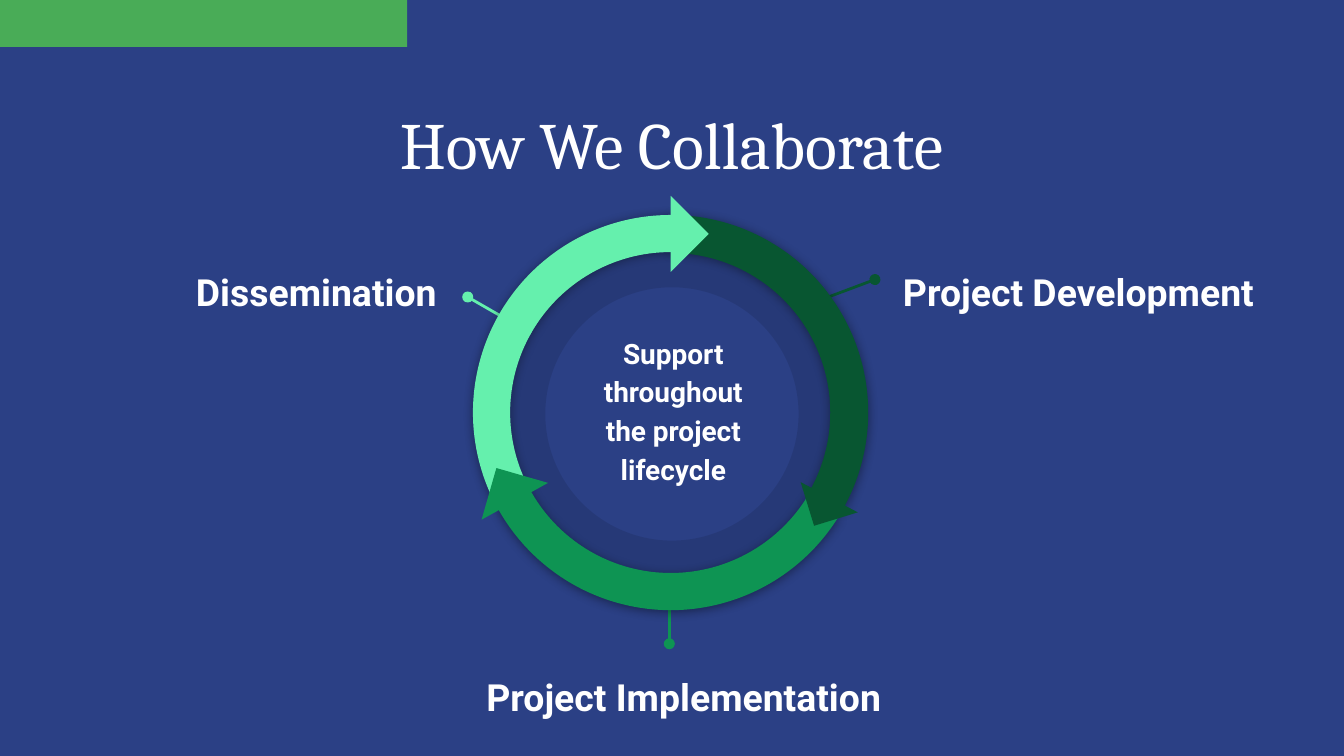
from lxml.etree import SubElement
from pptx import Presentation
from pptx.dml.color import RGBColor
from pptx.enum.shapes import MSO_CONNECTOR, MSO_SHAPE
from pptx.enum.text import MSO_ANCHOR, MSO_AUTO_SIZE, PP_ALIGN
from pptx.oxml.ns import qn
from pptx.util import Inches, Pt

NAVY = RGBColor(0x2B, 0x40, 0x85)
BANNER_GREEN = RGBColor(0x49, 0xAC, 0x57)
DARK = RGBColor(0x08, 0x56, 0x31)
LIGHT = RGBColor(0x65, 0xF0, 0xAD)
MEDIUM = RGBColor(0x0E, 0x94, 0x53)
BLACK = RGBColor(0, 0, 0)
WHITE = RGBColor(255, 255, 255)

SLIDE_W = 10
SLIDE_H = SLIDE_W * 9 / 16
CENTER = (4.99, 3.07)
DISC, RING = 2.78, 2.94
ADJ_PER_DEGREE = 0.6  # 60000 angle units over the 100000 adjustment scale

TITLE = "How We Collaborate"
HUB = "Support throughout the project lifecycle"

# label, label box, leader from dot to ring, colour
STAGES = [
    ("Dissemination", (1.36, 1.85, 2.04, 0.73), (3.48, 2.21, 3.95, 2.48), LIGHT),
    ("Project Development", (6.62, 1.85, 2.9, 0.68), (6.51, 2.08, 6.03, 2.26), DARK),
    ("Project Implementation", (3.52, 4.87, 3.8, 0.73), (4.98, 4.79, 4.98, 4.28), MEDIUM),
]

# colour, rotation, mirrored, start and end in degrees, thickness
ARCS = {
    "development": (DARK, 30, False, 240.24, 0.01, 0.096),
    "dissemination": (LIGHT, 330, True, 239.14, 357.88, 0.094),
    "implementation": (MEDIUM, 210, True, 238.6, 358.38, 0.094),
}
# colour, centre, side, rotation
HEADS = {
    "development": (DARK, (6.17, 3.7), 0.34, 342.9),
    "dissemination": (LIGHT, (4.99, 1.74), 0.4, 225),
    "implementation": (MEDIUM, (3.83, 3.73), 0.4, 106),
}


def inches(values):
    return [Inches(value) for value in values]


def square(center, side):
    return center[0] - side / 2, center[1] - side / 2, side, side


def add_filled(slide, kind, box, color, rotation=0):
    shape = slide.shapes.add_shape(kind, *inches(box))
    shape.fill.solid()
    shape.fill.fore_color.rgb = color
    shape.line.fill.background()
    shape.shadow.inherit = False
    shape.rotation = rotation
    return shape


def write(frame, text, size, font="Roboto", bold=True, align=PP_ALIGN.LEFT,
          anchor=MSO_ANCHOR.TOP, spacing=1.15):
    frame.word_wrap = True
    frame.auto_size = MSO_AUTO_SIZE.NONE
    frame.vertical_anchor = anchor
    frame.margin_left = frame.margin_right = Inches(0.1)
    frame.margin_top = frame.margin_bottom = Inches(0.1)
    paragraph = frame.paragraphs[0]
    paragraph.alignment = align
    paragraph.line_spacing = spacing
    run = paragraph.add_run()
    run.text = text
    run.font.size = Pt(size)
    run.font.name = font
    run.font.bold = bold
    run.font.color.rgb = WHITE


def add_text(slide, box, text, size, **text_format):
    write(slide.shapes.add_textbox(*inches(box)).text_frame, text, size, **text_format)


def add_leader(slide, ends, color):
    leader = slide.shapes.add_connector(MSO_CONNECTOR.STRAIGHT, *inches(ends))
    leader.line.color.rgb = color
    leader.line.width = Pt(1.5)
    SubElement(leader.line._get_or_add_ln(), qn("a:headEnd"), type="oval")
    SubElement(leader._element.spPr, qn("a:effectLst"))


def add_arc(slide, color, rotation, mirrored, start, end, thickness):
    arc = add_filled(slide, MSO_SHAPE.BLOCK_ARC, square(CENTER, RING), color, rotation)
    arc.adjustments[0] = start * ADJ_PER_DEGREE
    arc.adjustments[1] = end * ADJ_PER_DEGREE
    arc.adjustments[2] = thickness
    if mirrored:
        arc._element.spPr.xfrm.set("flipH", "1")
    effects = arc._element.spPr.find(qn("a:effectLst"))
    shadow = SubElement(effects, qn("a:outerShdw"), blurRad=str(Pt(5.6)),
                        dist=str(Pt(0.8)), dir="5400000", rotWithShape="0")
    shade = SubElement(shadow, qn("a:srgbClr"), val=str(BLACK))
    SubElement(shade, qn("a:alpha"), val="40000")


def add_head(slide, color, center, side, rotation):
    add_filled(slide, MSO_SHAPE.RIGHT_TRIANGLE, square(center, side), color, rotation)


def main():
    deck = Presentation()
    deck.slide_width, deck.slide_height = inches((SLIDE_W, SLIDE_H))
    slide = deck.slides.add_slide(deck.slide_layouts[5])
    slide.background.fill.solid()
    slide.background.fill.fore_color.rgb = NAVY

    title = slide.shapes.title
    title.left, title.top, title.width, title.height = inches((0.62, 0.67, 8.75, 0.63))
    write(title.text_frame, TITLE, 35.4, font="Cambria", bold=False,
          align=PP_ALIGN.CENTER, spacing=1.0)

    disc = add_filled(slide, MSO_SHAPE.DONUT, square((5, 3.08), DISC), BLACK)
    disc.adjustments[0] = 0.161
    tint = disc._element.spPr.find(qn("a:solidFill"))[0]
    SubElement(tint, qn("a:alpha"), val="10000")

    for label, box, ends, color in STAGES:
        add_leader(slide, ends, color)
        add_text(slide, box, label, 20)
    add_text(slide, (4.22, 2.34, 1.58, 1.4), HUB, 15,
             align=PP_ALIGN.CENTER, anchor=MSO_ANCHOR.MIDDLE)

    # Each arrowhead has to lie above the arc that it points into.
    add_arc(slide, *ARCS["development"])
    add_arc(slide, *ARCS["dissemination"])
    add_head(slide, *HEADS["dissemination"])
    add_arc(slide, *ARCS["implementation"])
    add_head(slide, *HEADS["development"])
    add_head(slide, *HEADS["implementation"])

    add_filled(slide, MSO_SHAPE.RECTANGLE, (0, 0, 3.03, 0.35), BANNER_GREEN)
    deck.save("out.pptx")


if __name__ == "__main__":
    main()
